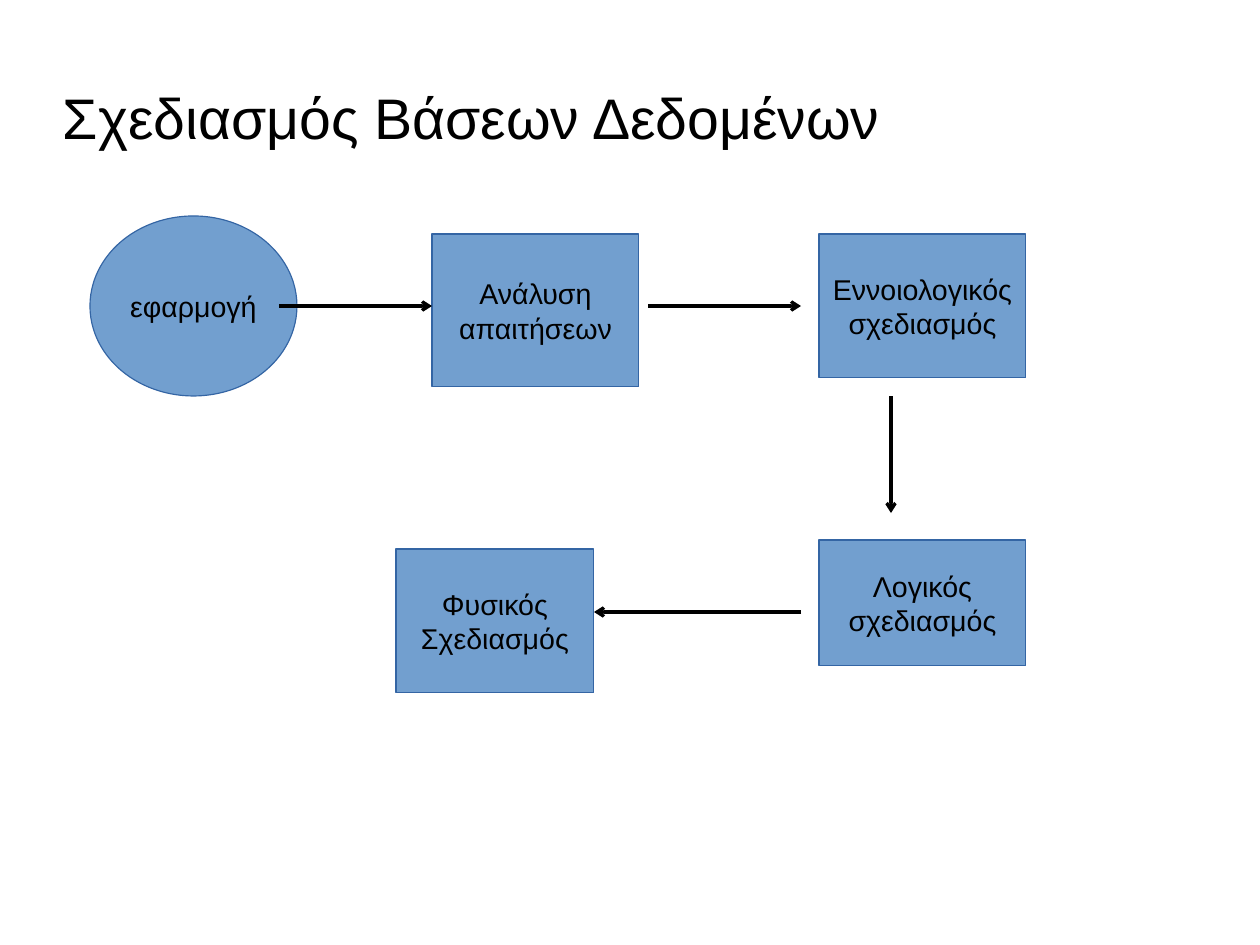
from lxml import etree
from pptx import Presentation
from pptx.dml.color import RGBColor
from pptx.enum.shapes import MSO_CONNECTOR, MSO_SHAPE
from pptx.enum.text import MSO_ANCHOR, PP_ALIGN
from pptx.oxml.ns import qn
from pptx.util import Cm, Pt

OVAL, RECT = MSO_SHAPE.OVAL, MSO_SHAPE.RECTANGLE
STRAIGHT = MSO_CONNECTOR.STRAIGHT
LEFT, CENTER = PP_ALIGN.LEFT, PP_ALIGN.CENTER
MIDDLE = MSO_ANCHOR.MIDDLE


def rgb(value):
    return RGBColor.from_string(value)


class Diagram:
    """Draws a flow diagram on one slide in a single style."""

    font, ink, fill, edge = "Arial", "000000", "729FCF", "3465A4"

    def __init__(self, slide):
        self.s = slide

    def label(self, sp, lines, size, align, frame):
        tf = sp.text_frame
        for name, value in {"vertical_anchor": MIDDLE, **frame}.items():
            setattr(tf, name, value)
        for i, line in enumerate(lines):
            p = tf.add_paragraph() if i else tf.paragraphs[0]
            p.alignment = align
            r = p.add_run()
            r.text = line
            for name, value in {"name": self.font, "size": Pt(size)}.items():
                setattr(r.font, name, value)
            r.font.color.rgb = rgb(self.ink)

    def title(self, text, *box):
        sp = self.s.shapes.add_textbox(*map(Cm, box))
        sides = ("left", "top", "right", "bottom")
        frame = {f"margin_{side}": 0 for side in sides}
        self.label(sp, [text], 36, LEFT, {"word_wrap": True, **frame})

    def node(self, kind, lines, *box):
        sp = self.s.shapes.add_shape(kind, *map(Cm, box))
        sp.shadow.inherit = False
        sp.fill.solid()
        sp.fill.fore_color.rgb = rgb(self.fill)
        sp.line.color.rgb = rgb(self.edge)
        sp.line.width = Pt(0)
        self.label(sp, lines, 18, CENTER, {"word_wrap": False})

    def arrow(self, *ends):
        sp = self.s.shapes.add_connector(STRAIGHT, *map(Cm, ends))
        sp.line.color.rgb = rgb(self.ink)
        sp.line.width = Pt(0)
        props = sp._element.spPr
        etree.SubElement(props.find(qn("a:ln")), qn("a:tailEnd"), type="arrow")
        etree.SubElement(props, qn("a:effectLst"))


def main():
    prs = Presentation()
    prs.slide_width, prs.slide_height = Cm(28), Cm(21)
    d = Diagram(prs.slides.add_slide(prs.slide_layouts[6]))

    d.title("Σχεδιασμός Βάσεων Δεδομένων", 1.4, 1.6, 20, 2)

    nodes = [
        (OVAL, ["εφαρμογή"], 2, 4.8, 4.6, 4),
        (RECT, ["Ανάλυση", "απαιτήσεων"], 9.6, 5.2, 4.6, 3.4),
        (RECT, ["Εννοιολογικός", "σχεδιασμός"], 18.2, 5.2, 4.6, 3.2),
        (RECT, ["Λογικός", "σχεδιασμός"], 18.2, 12, 4.6, 2.8),
        (RECT, ["Φυσικός", "Σχεδιασμός"], 8.8, 12.2, 4.4, 3.2),
    ]
    for node in nodes:
        d.node(*node)

    arrows = [
        (6.2, 6.8, 9.6, 6.8),
        (14.4, 6.8, 17.8, 6.8),
        (19.8, 8.8, 19.8, 11.4),
        (17.8, 13.6, 13.2, 13.6),
    ]
    for ends in arrows:
        d.arrow(*ends)

    prs.save("out.pptx")


if __name__ == "__main__":
    main()
